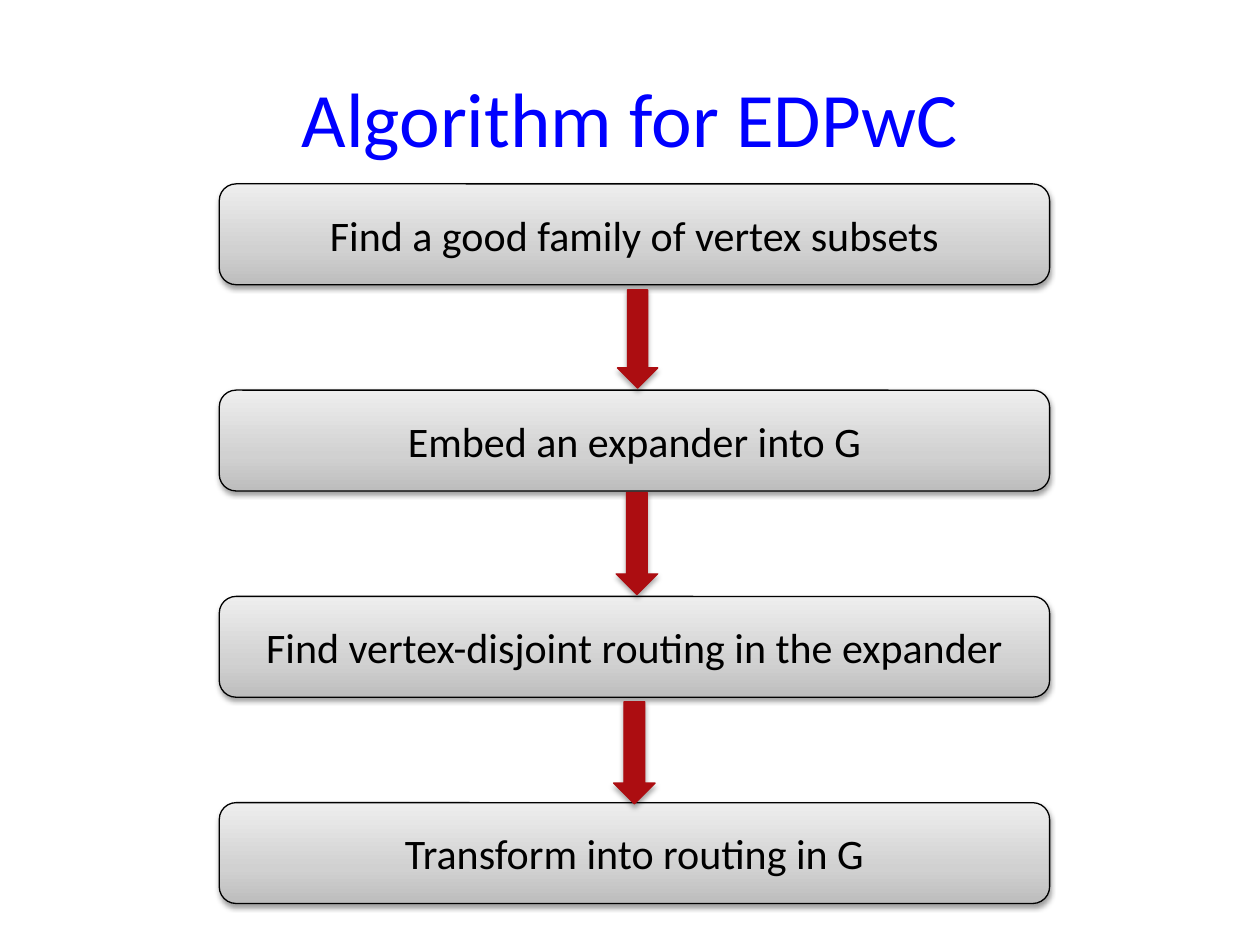
from dataclasses import dataclass

from lxml import etree
from pptx import Presentation
from pptx.dml.color import RGBColor
from pptx.enum import shapes, text
from pptx.oxml import ns
from pptx.util import Inches, Pt


@dataclass(frozen=True)
class Theme:
    font: str = "Calibri"
    title: str = "0000FF"
    ink: str = "000000"
    arrow: str = "AC0D11"
    fade: tuple = ((0, "BDBDBD"), (35, "D1D1D1"), (100, "EEEEEE"))
    head_size: int = 44
    step_size: int = 24
    line: float = 0.75


@dataclass(frozen=True)
class Arrow:
    left: float
    top: float
    width: float
    height: float


THEME = Theme()
STEPS = (
    "Find a good family of vertex subsets",
    "Embed an expander into G",
    "Find vertex-disjoint routing in the expander",
    "Transform into routing in G",
)
ARROWS = (
    Arrow(4.9, 2.3, 0.32, 0.78),
    Arrow(4.89, 3.91, 0.33, 0.81),
    Arrow(4.87, 5.57, 0.33, 0.81),
)
LEFT, TOP, WIDTH, HEIGHT, PITCH = 1.74, 1.46, 6.59, 0.8, 1.637


def add_node(parent, tag: str, **attrs):
    return etree.SubElement(parent, ns.qn(tag), {k: str(v) for k, v in attrs.items()})


def add_color(parent, color: str):
    return add_node(parent, "a:srgbClr", val=color)


def set_shadow(shape, alpha: int, dist: float) -> None:
    """Give the shape a soft shadow that falls straight down."""
    shape.shadow.inherit = False
    effects = shape._element.spPr.find(ns.qn("a:effectLst"))
    outer = add_node(effects, "a:outerShdw", blurRad=Pt(3.1), dist=Pt(dist),
                     dir=90 * 60000, rotWithShape=0)
    add_node(add_color(outer, THEME.ink), "a:alpha", val=alpha * 1000)


def set_fade(shape) -> None:
    """Fill with the theme's three-stop gradient, darkest at the bottom."""
    shape.fill.gradient()
    shape.fill.gradient_angle = 90
    stops = shape._element.spPr.find(ns.qn("a:gradFill")).find(ns.qn("a:gsLst"))
    for stop in list(stops):
        stops.remove(stop)
    for pos, color in THEME.fade:
        add_color(add_node(stops, "a:gs", pos=pos * 1000), color)


def set_line(shape, color: str) -> None:
    shape.line.color.rgb = RGBColor.from_string(color)
    shape.line.width = Pt(THEME.line)


def set_text(shape, words: str, size: int, color: str) -> None:
    frame = shape.text_frame
    frame.text = words
    frame.word_wrap = True
    frame.vertical_anchor = text.MSO_ANCHOR.MIDDLE
    para = frame.paragraphs[0]
    para.alignment = text.PP_ALIGN.CENTER
    font = para.runs[0].font
    font.name = THEME.font
    font.size = Pt(size)
    font.color.rgb = RGBColor.from_string(color)


def add_title(slide, words: str) -> None:
    box = slide.shapes.add_textbox(Inches(0.5), Inches(0.3), Inches(9), Inches(1.25))
    set_text(box, words, THEME.head_size, THEME.title)


def add_step(slide, row: int, words: str) -> None:
    box = slide.shapes.add_shape(
        shapes.MSO_SHAPE.ROUNDED_RECTANGLE, Inches(LEFT), Inches(TOP + row * PITCH),
        Inches(WIDTH), Inches(HEIGHT))
    set_fade(box)
    set_line(box, THEME.ink)
    set_shadow(box, 38, 1.6)
    set_text(box, words, THEME.step_size, THEME.ink)


def add_arrow(slide, arrow: Arrow) -> None:
    shape = slide.shapes.add_shape(
        shapes.MSO_SHAPE.DOWN_ARROW, Inches(arrow.left), Inches(arrow.top),
        Inches(arrow.width), Inches(arrow.height))
    shape.fill.solid()
    shape.fill.fore_color.rgb = RGBColor.from_string(THEME.arrow)
    set_line(shape, THEME.arrow)
    set_shadow(shape, 35, 1.8)


def main() -> None:
    deck = Presentation()
    deck.slide_width, deck.slide_height = Inches(10), Inches(7.5)
    slide = deck.slides.add_slide(deck.slide_layouts[6])
    add_title(slide, "Algorithm for EDPwC")
    for row, words in enumerate(STEPS):
        add_step(slide, row, words)
    for arrow in ARROWS:
        add_arrow(slide, arrow)
    deck.save("out.pptx")


if __name__ == "__main__":
    main()
